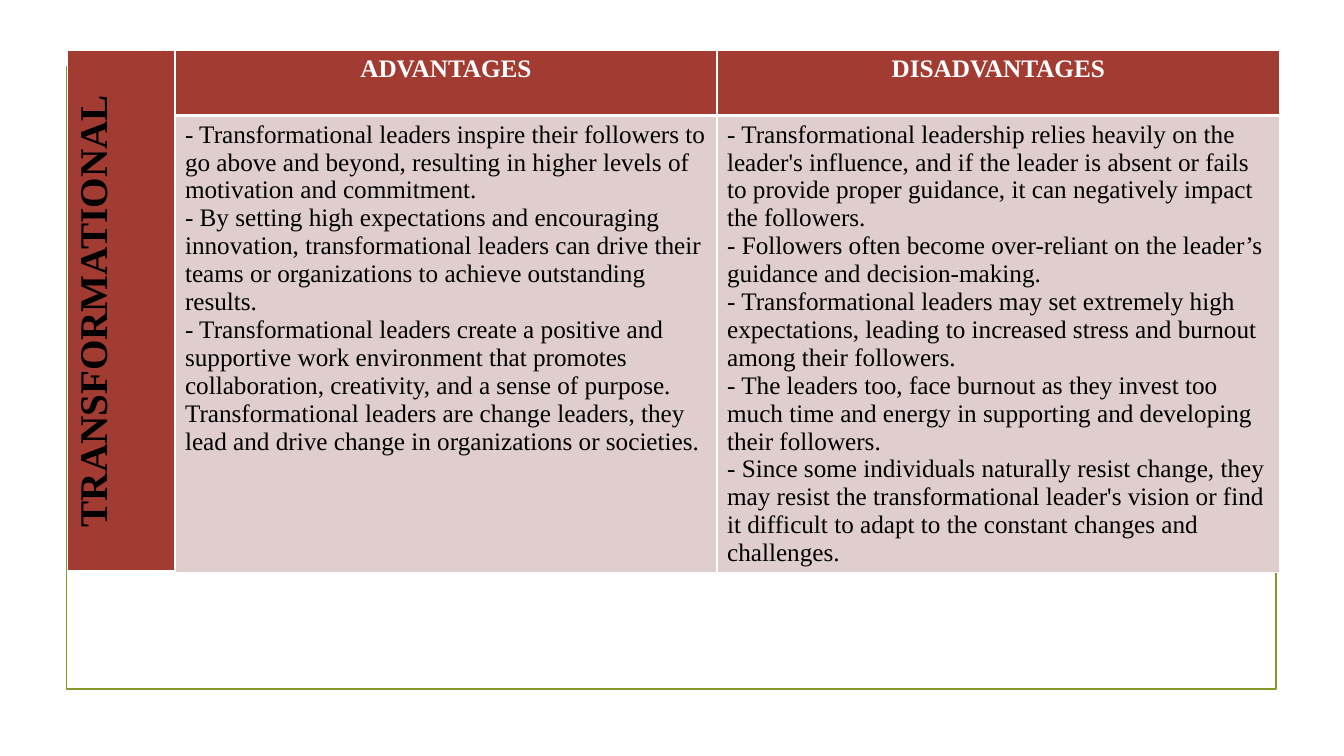
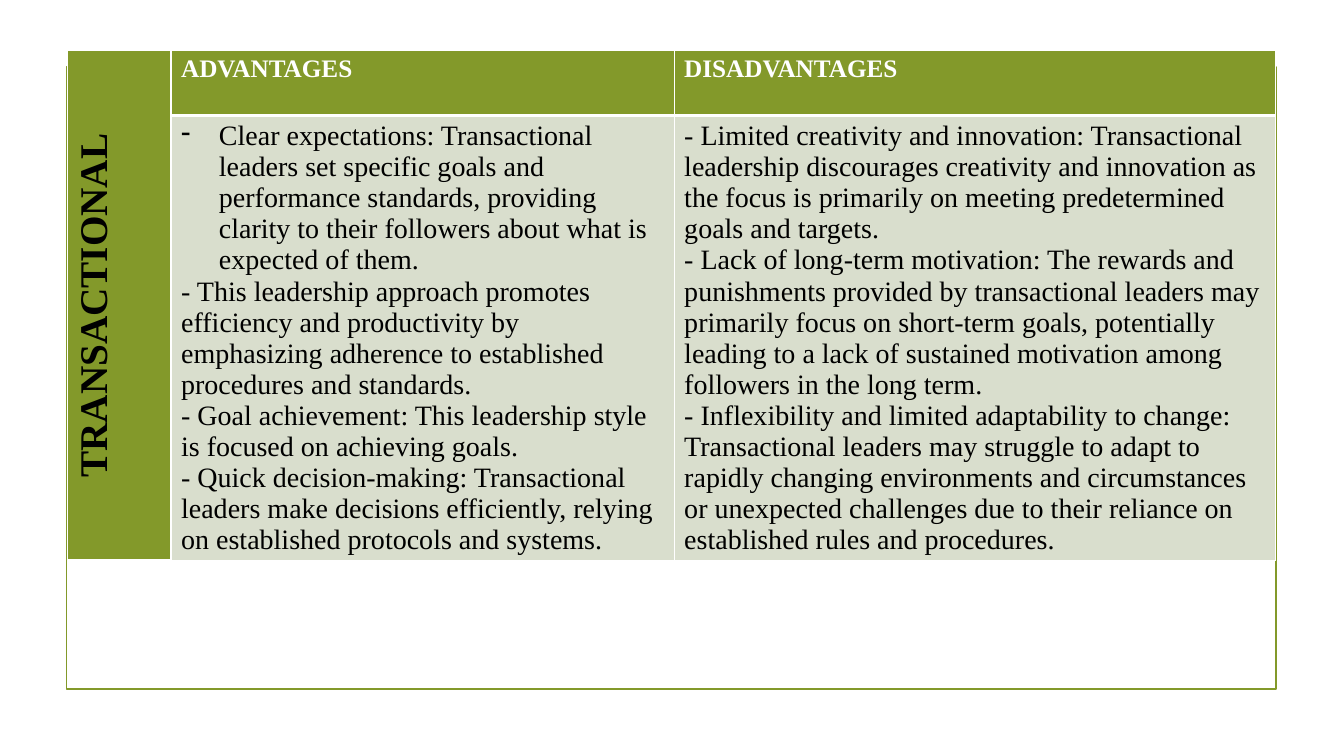
from lxml.etree import SubElement
from pptx import Presentation
from pptx.dml.color import RGBColor
from pptx.enum.shapes import MSO_SHAPE
from pptx.enum.text import MSO_ANCHOR, PP_ALIGN
from pptx.oxml.ns import qn
from pptx.util import Pt

COLORS = {
    "white": "FFFFFF",
    "black": "000000",
    "olive": "83992A",
    "pale olive": "D9DECD",
    "red": "A23C33",
    "pale red": "E0CECE",
}
FONT = "Times New Roman"
TABLE_LEFT, TABLE_TOP, HEADER_HEIGHT = 48, 36, 46.6
HANGING_INDENT = 27
LABEL_STYLE = {"name": FONT, "size": Pt(28), "bold": True}
HEADER_STYLE = {"name": FONT, "size": Pt(18), "bold": True}

TRANSFORMATIONAL = {
    "label": "TRANSFORMATIONAL",
    "accent": "red",
    "tint": "pale red",
    "columns": (77, 387.2, 401.8),
    "body_height": 325.6,
    "body_size": 18,
    "header_alignment": PP_ALIGN.CENTER,
    "hanging_first": False,
    "advantages": [
        "- Transformational leaders inspire their followers to go above and beyond, resulting in higher "
        "levels of motivation and commitment.",
        "- By setting high expectations and encouraging innovation, transformational leaders can drive "
        "their teams or organizations to achieve outstanding results.",
        "- Transformational leaders create a positive and supportive work environment that promotes "
        "collaboration, creativity, and a sense of purpose. Transformational leaders are change leaders, "
        "they lead and drive change in organizations or societies.",
    ],
    "disadvantages": [
        "- Transformational leadership relies heavily on the leader's influence, and if the leader is "
        "absent or fails to provide proper guidance, it can negatively impact the followers.",
        "- Followers often become over-reliant on the leader’s guidance and decision-making.",
        "- Transformational leaders may set extremely high expectations, leading to increased stress and "
        "burnout among their followers.",
        "- The leaders too, face burnout as they invest too much time and energy in supporting and "
        "developing their followers.",
        "- Since some individuals naturally resist change, they may resist the transformational leader's "
        "vision or find it difficult to adapt to the constant changes and challenges.",
    ],
}

TRANSACTIONAL = {
    "label": "TRANSACTIONAL",
    "accent": "olive",
    "tint": "pale olive",
    "columns": (74.2, 359.4, 429.8),
    "body_height": 317.4,
    "body_size": 20,
    "header_alignment": PP_ALIGN.LEFT,
    "hanging_first": True,
    "advantages": [
        "Clear expectations: Transactional leaders set specific goals and performance standards, "
        "providing clarity to their followers about what is expected of them.",
        "- This leadership approach promotes efficiency and productivity by emphasizing adherence to "
        "established procedures and standards.",
        "- Goal achievement: This leadership style is focused on achieving goals.",
        "- Quick decision-making: Transactional leaders make decisions efficiently, relying on "
        "established protocols and systems.",
    ],
    "disadvantages": [
        "- Limited creativity and innovation: Transactional leadership discourages creativity and "
        "innovation as the focus is primarily on meeting predetermined goals and targets.",
        "- Lack of long-term motivation: The rewards and punishments provided by transactional leaders "
        "may primarily focus on short-term goals, potentially leading to a lack of sustained motivation "
        "among followers in the long term.",
        "- Inflexibility and limited adaptability to change: Transactional leaders may struggle to adapt "
        "to rapidly changing environments and circumstances or unexpected challenges due to their "
        "reliance on established rules and procedures.",
    ],
}


def rgb(name):
    return RGBColor.from_string(COLORS[name])


def add_frame(slide):
    frame = slide.shapes.add_shape(MSO_SHAPE.RECTANGLE, Pt(47.6), Pt(48), Pt(864), Pt(444))
    frame.shadow.inherit = False
    frame.fill.background()
    frame.line.color.rgb = rgb("olive")
    frame.line.width = Pt(1.25)


def set_borders(cell, bottom_width):
    properties = cell._tc.get_or_add_tcPr()
    for side, width in (("L", 1), ("R", 1), ("T", 1), ("B", bottom_width)):
        line = SubElement(properties, qn(f"a:ln{side}"), w=str(Pt(width)))
        fill = SubElement(line, qn("a:solidFill"))
        SubElement(fill, qn("a:srgbClr"), val=COLORS["white"])


def add_dash_bullet(paragraph):
    properties = paragraph._p.get_or_add_pPr()
    properties.set("marL", str(Pt(HANGING_INDENT)))
    properties.set("indent", str(-Pt(HANGING_INDENT)))
    SubElement(properties, qn("a:buChar"), char="-")


def fill_cell(cell, texts, fill, color, style, alignment=PP_ALIGN.LEFT, bottom_width=1, hanging_first=False):
    set_borders(cell, bottom_width)
    cell.fill.solid()
    cell.fill.fore_color.rgb = rgb(fill)
    cell.vertical_anchor = MSO_ANCHOR.TOP
    text_frame = cell.text_frame
    text_frame.text = "\n".join(texts)
    if hanging_first:
        add_dash_bullet(text_frame.paragraphs[0])
    for paragraph in text_frame.paragraphs:
        paragraph.alignment = alignment
        for run in paragraph.runs:
            for attribute, value in style.items():
                setattr(run.font, attribute, value)
            run.font.color.rgb = rgb(color)


def add_comparison_table(slide, content):
    """Two headed columns beside a rotated label that spans both rows."""
    columns = content["columns"]
    heights = (HEADER_HEIGHT, content["body_height"])
    table = slide.shapes.add_table(
        2, 3, Pt(TABLE_LEFT), Pt(TABLE_TOP), Pt(sum(columns)), Pt(sum(heights))
    ).table
    table.horz_banding = False
    for column, width in zip(table.columns, columns):
        column.width = Pt(width)
    for row, height in zip(table.rows, heights):
        row.height = Pt(height)

    label = table.cell(0, 0)
    label.merge(table.cell(1, 0))
    fill_cell(label, [content["label"]], content["accent"], "black", LABEL_STYLE, PP_ALIGN.CENTER, 3)
    label._tc.get_or_add_tcPr().set("vert", "vert270")

    body_style = {"name": FONT, "size": Pt(content["body_size"]), "bold": False}
    for index, key in enumerate(("advantages", "disadvantages"), start=1):
        fill_cell(table.cell(0, index), [key.upper()], content["accent"], "white",
                  HEADER_STYLE, content["header_alignment"], 3)
        fill_cell(table.cell(1, index), content[key], content["tint"], "black", body_style,
                  hanging_first=content["hanging_first"] and key == "advantages")


def main():
    presentation = Presentation()
    presentation.slide_width, presentation.slide_height = Pt(960), Pt(540)
    blank_layout = presentation.slide_layouts[6]
    for content in (TRANSFORMATIONAL, TRANSACTIONAL):
        slide = presentation.slides.add_slide(blank_layout)
        add_frame(slide)
        add_comparison_table(slide, content)
    presentation.save("out.pptx")


if __name__ == "__main__":
    main()
